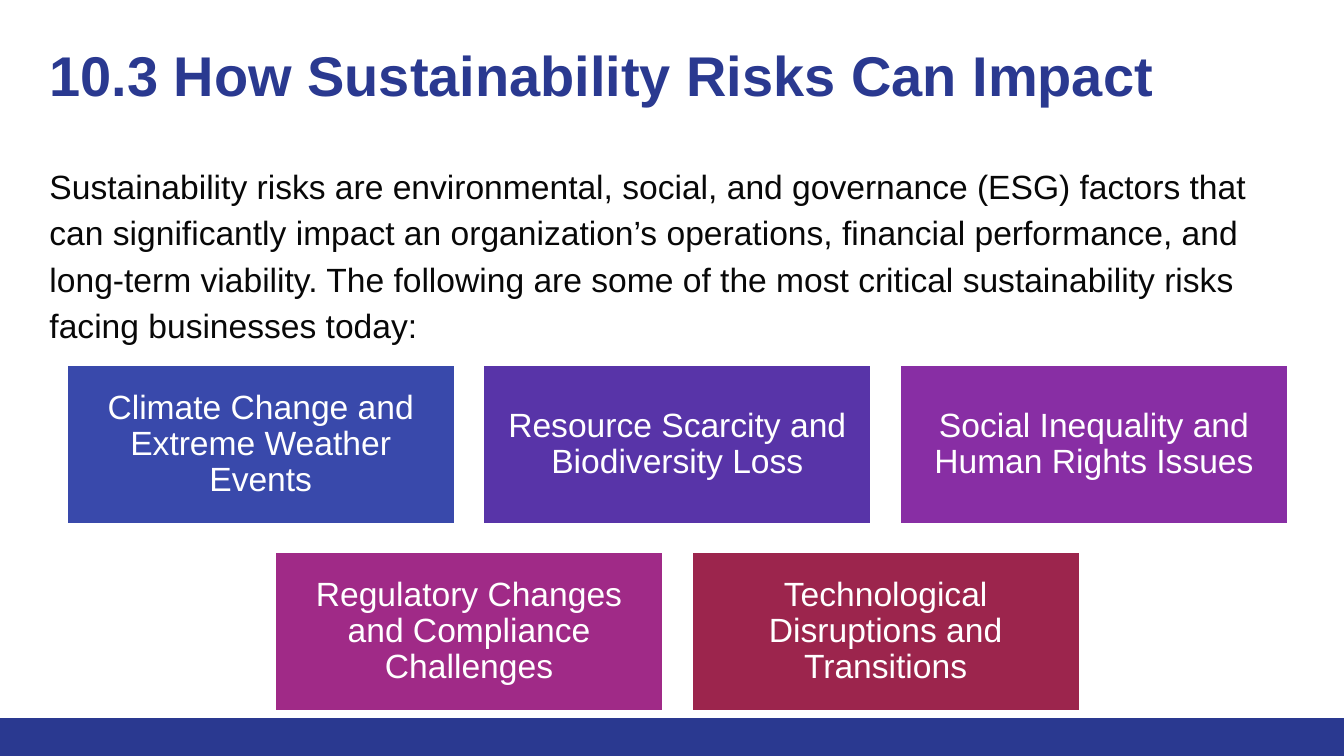
from pptx import Presentation
from pptx.dml.color import RGBColor
from pptx.enum.shapes import MSO_SHAPE as Shape
from pptx.enum.text import MSO_ANCHOR as Anchor, PP_ALIGN as Align
from pptx.util import Inches, Pt

NAVY, WHITE, INK = "2A3990", "FFFFFF", "080808"

deck = Presentation()
deck.slide_width = Inches(10)
deck.slide_height = deck.slide_width * 9 // 16
page = deck.slides.add_slide(deck.slide_layouts[6])


def add_rect(left, top, width, height, fill):
    box = page.shapes.add_shape(Shape.RECTANGLE, left, top, width, height)
    box.shadow.inherit = False
    box.fill.solid()
    box.fill.fore_color.rgb = RGBColor.from_string(fill)
    box.line.fill.background()
    return box


def write(box, text, color, inset, spacing, font, anchor=Anchor.TOP, align=Align.LEFT):
    frame = box.text_frame
    frame.word_wrap = True
    frame.vertical_anchor = anchor
    for side in ("left", "top", "right", "bottom"):
        setattr(frame, f"margin_{side}", Inches(inset))
    para = frame.paragraphs[0]
    para.alignment = align
    para.line_spacing = spacing
    span = para.add_run()
    span.text = text
    span.font.color.rgb = RGBColor.from_string(color)
    for name, value in font.items():
        setattr(span.font, name, value)


body_font = {"name": "Arial", "size": Pt(18)}
title_font = {"name": "Arial", "size": Pt(30), "bold": True}

# Footer band
band = deck.slide_height // 20
add_rect(0, deck.slide_height - band, deck.slide_width, band, NAVY)

# Title and introduction
left = Inches(0.27)
title = page.shapes.add_textbox(left, Inches(0.2), Inches(9.2), Inches(0.89))
write(title, "10.3 How Sustainability Risks Can Impact", NAVY, 0.1, 1.0, title_font)

intro = page.shapes.add_textbox(left, Inches(1.09), Inches(9.46), Inches(4.21))
write(
    intro,
    "Sustainability risks are environmental, social, and governance (ESG) factors that "
    "can significantly impact an organization’s operations, financial performance, and "
    "long-term viability. The following are some of the most critical sustainability "
    "risks facing businesses today:",
    INK, 0.1, 1.15, body_font,
)

# Risk cards: each row is centred on the same axis
card_rows = [
    [
        ("Climate Change and Extreme Weather Events", "3949AB"),
        ("Resource Scarcity and Biodiversity Loss", "5834A8"),
        ("Social Inequality and Human Rights Issues", "882EA4"),
    ],
    [
        ("Regulatory Changes and Compliance Challenges", "A02A87"),
        ("Technological Disruptions and Transitions", "9C254D"),
    ],
]
card_width, card_height = Inches(2.9), Inches(1.2)
column_step, row_step = Inches(3.1), Inches(1.39)
axis, first_top = Inches(5.04), Inches(2.71)

for row, cards in enumerate(card_rows):
    row_left = axis - (column_step * (len(cards) - 1) + card_width) // 2
    for column, (label, fill) in enumerate(cards):
        card = add_rect(
            row_left + column * column_step, first_top + row * row_step,
            card_width, card_height, fill,
        )
        card.line.color.rgb = RGBColor.from_string(WHITE)
        card.line.width = Pt(2)
        write(card, label, WHITE, 0.07, 0.9, body_font, Anchor.MIDDLE, Align.CENTER)

deck.save("out.pptx")
